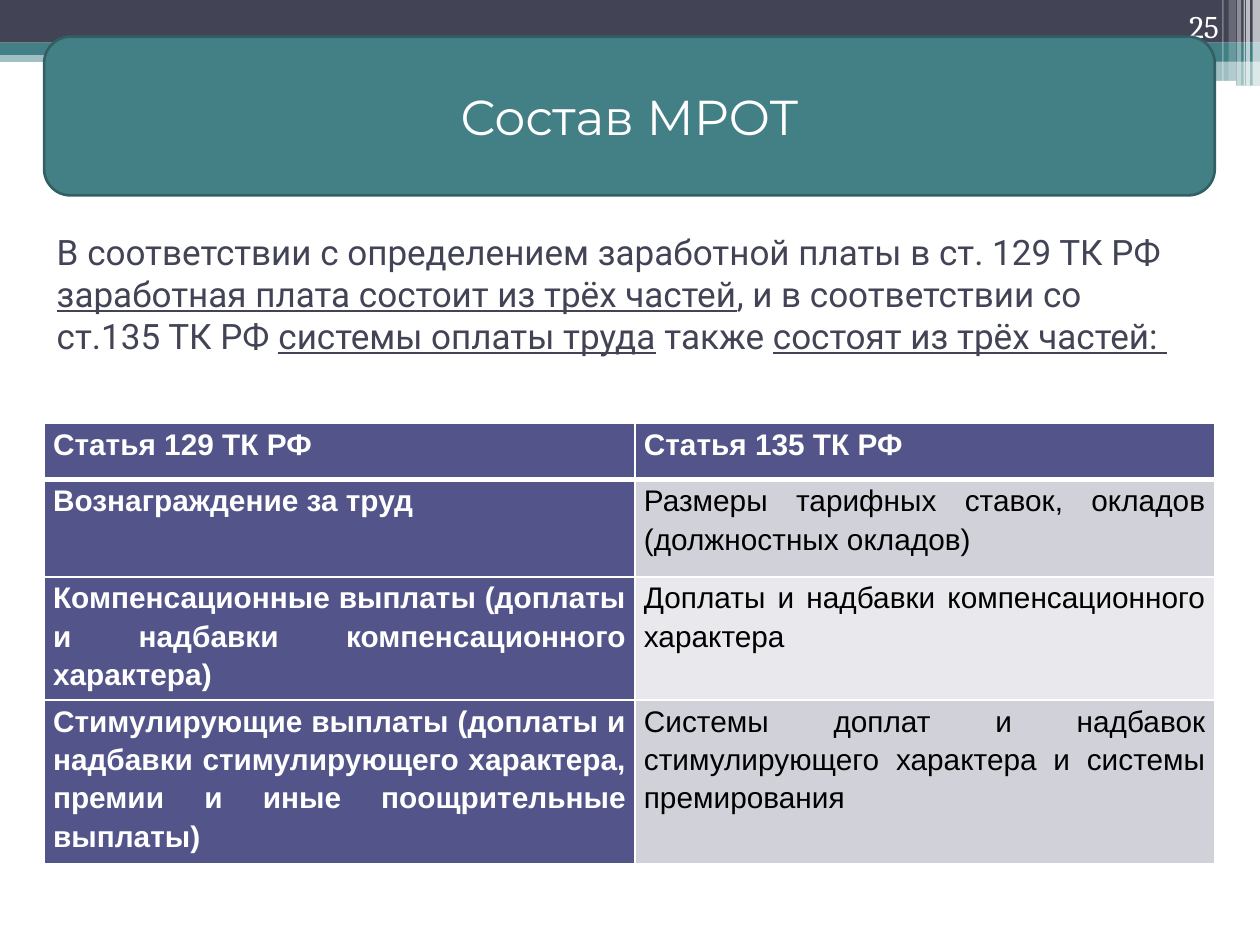
import pptx
import pptx.util
import pptx.dml.color
import pptx.enum.shapes
import pptx.enum.text
import pptx.oxml
import pptx.oxml.ns
import lxml.etree

Cm, Pt = pptx.util.Cm, pptx.util.Pt
KIND = pptx.enum.shapes.MSO_SHAPE
ALIGN = pptx.enum.text.PP_ALIGN
ANCHOR = pptx.enum.text.MSO_ANCHOR

DARK, TEAL, EDGE = "424456", "438086", "325F63"
WHITE, BLACK, PLUM = "FFFFFF", "000000", "53548A"
ODD, EVEN = "D1D1DA", "E9E9ED"

# left, top, width, height in cm; colour; opacity in percent
BARS = [
    (0, 1.02, 25.4, 0.23, TEAL, 50),
    (0, 0, 25.4, 0.86, DARK, 100),
    (0, 0.86, 25.4, 0.25, TEAL, 100),
    (15.04, 0.99, 10.36, 0.25, TEAL, 100),
    (15.04, 1.22, 10.36, 0.51, TEAL, 50),
]
# left, width, height in cm; opacity in percent
STRIPES = [
    (25.25, 0.15, 1.73, 65), (25.12, 0.08, 1.73, 65), (25.07, 0.03, 1.73, 60),
    (24.94, 0.08, 1.73, 40), (24.77, 0.15, 1.63, 20), (24.64, 0.03, 1.63, 30),
]
# text, underlined
INTRO = [
    ("В соответствии с определением заработной платы в ст. 129 ТК РФ ", False),
    ("заработная плата состоит из трёх частей", True),
    (", и в соответствии со ст.135 ТК РФ ", False),
    ("системы оплаты труда", True),
    (" также ", False),
    ("состоят из трёх частей: ", True),
]
ROWS = [
    ("Статья 129 ТК РФ", "Статья 135 ТК РФ"),
    ("Вознаграждение за труд",
     "Размеры тарифных ставок, окладов (должностных окладов)"),
    ("Компенсационные выплаты (доплаты и надбавки компенсационного характера)",
     "Доплаты и надбавки компенсационного характера"),
    ("Стимулирующие выплаты (доплаты и надбавки стимулирующего характера, "
     "премии и иные поощрительные выплаты)",
     "Системы доплат и надбавок стимулирующего характера и системы премирования"),
]
WIDTHS = (11.91, 11.68)
HEIGHTS = (1.14, 1.96, 1.96, 2.95)


def rgb(code):
    return pptx.dml.color.RGBColor.from_string(code)


def style(item, form):
    for name, value in form.items():
        setattr(item, name, value)


def write(para, text, color, form):
    run = para.add_run()
    run.text = text
    style(run.font, form)
    run.font.color.rgb = rgb(color)


def block(slide, kind, left, top, width, height, color, alpha=100):
    """Add a filled shape without line or shadow."""
    shape = slide.shapes.add_shape(kind, Cm(left), Cm(top), Cm(width), Cm(height))
    shape.shadow.inherit = False
    shape.line.fill.background()
    shape.fill.solid()
    shape.fill.fore_color.rgb = rgb(color)
    if alpha < 100:
        tint = shape.fill._xPr.find(".//" + pptx.oxml.ns.qn("a:srgbClr"))
        lxml.etree.SubElement(tint, pptx.oxml.ns.qn("a:alpha"), val=str(alpha * 1000))
    return shape


def decor(slide):
    for bar in BARS:
        block(slide, KIND.RECTANGLE, *bar)
    block(slide, KIND.ROUNDED_RECTANGLE, 20.47, 1.63, 4.45, 0.1, WHITE)
    for left, width, height, alpha in STRIPES:
        block(slide, KIND.RECTANGLE, left, 0, width, height, WHITE, alpha)


def intro(slide):
    title = slide.shapes.title
    style(title, {"left": Cm(0.89), "top": Cm(4.52),
                  "width": Cm(23.22), "height": Cm(13.59)})
    frame = title.text_frame
    style(frame, {"word_wrap": True, "vertical_anchor": ANCHOR.TOP,
                  "auto_size": pptx.enum.text.MSO_AUTO_SIZE.NONE})
    para = frame.paragraphs[0]
    style(para, {"alignment": ALIGN.LEFT, "line_spacing": 1.0})
    for text, under in INTRO:
        write(para, text, DARK,
              {"name": "Roboto", "size": Pt(20), "underline": under})


def number(slide):
    box = slide.shapes.add_textbox(Cm(22.71), 0, Cm(2.11), Cm(1.02))
    style(box.text_frame, {"word_wrap": True, "vertical_anchor": ANCHOR.BOTTOM})
    para = box.text_frame.paragraphs[0]
    para.alignment = ALIGN.RIGHT
    write(para, "25", WHITE, {"name": "Cambria", "size": Pt(18)})


def banner(slide):
    shape = block(slide, KIND.ROUNDED_RECTANGLE, 0.89, 0.74, 23.6, 3.2, TEAL)
    shape.line.color.rgb = rgb(EDGE)
    shape.line.width = Pt(1.5)
    shape.text_frame.vertical_anchor = ANCHOR.MIDDLE
    para = shape.text_frame.paragraphs[0]
    para.alignment = ALIGN.CENTER
    write(para, "Состав МРОТ", WHITE, {"name": "Montserrat", "size": Pt(28)})


def border(cell, side, width):
    cell._tc.get_or_add_tcPr().append(pptx.oxml.parse_xml(
        f'<a:ln{side} {pptx.oxml.ns.nsdecls("a")} w="{Pt(width)}">'
        f'<a:solidFill><a:srgbClr val="{WHITE}"/></a:solidFill></a:ln{side}>'))


def fill_cell(cell, text, row, col):
    head = row == 0 or col == 0
    style(cell, {"margin_left": Cm(0.18), "margin_right": Cm(0.18),
                 "margin_top": 0, "margin_bottom": 0})
    for side in "LRTB":
        thick = (row, side) in ((0, "B"), (1, "T"))
        border(cell, side, 3 if thick else 1)
    cell.fill.solid()
    cell.fill.fore_color.rgb = rgb(PLUM if head else ODD if row % 2 else EVEN)
    para = cell.text_frame.paragraphs[0]
    style(para, {"alignment": ALIGN.JUSTIFY, "line_spacing": 1.15})
    write(para, text, WHITE if head else BLACK,
          {"name": "Arial", "size": Pt(17), "bold": head})


def grid(slide):
    table = slide.shapes.add_table(
        len(ROWS), len(WIDTHS), Cm(0.89), Cm(8.53),
        Cm(sum(WIDTHS)), Cm(sum(HEIGHTS))).table
    table.horz_banding = False
    for col, width in zip(table.columns, WIDTHS):
        col.width = Cm(width)
    for row, height in zip(table.rows, HEIGHTS):
        row.height = Cm(height)
    for i, texts in enumerate(ROWS):
        for j, text in enumerate(texts):
            fill_cell(table.cell(i, j), text, i, j)


def main():
    deck = pptx.Presentation()
    style(deck, {"slide_width": Cm(25.4), "slide_height": Cm(19.05)})
    slide = deck.slides.add_slide(deck.slide_layouts[5])
    for draw in (decor, intro, number, banner, grid):
        draw(slide)
    deck.save("out.pptx")


if __name__ == "__main__":
    main()
